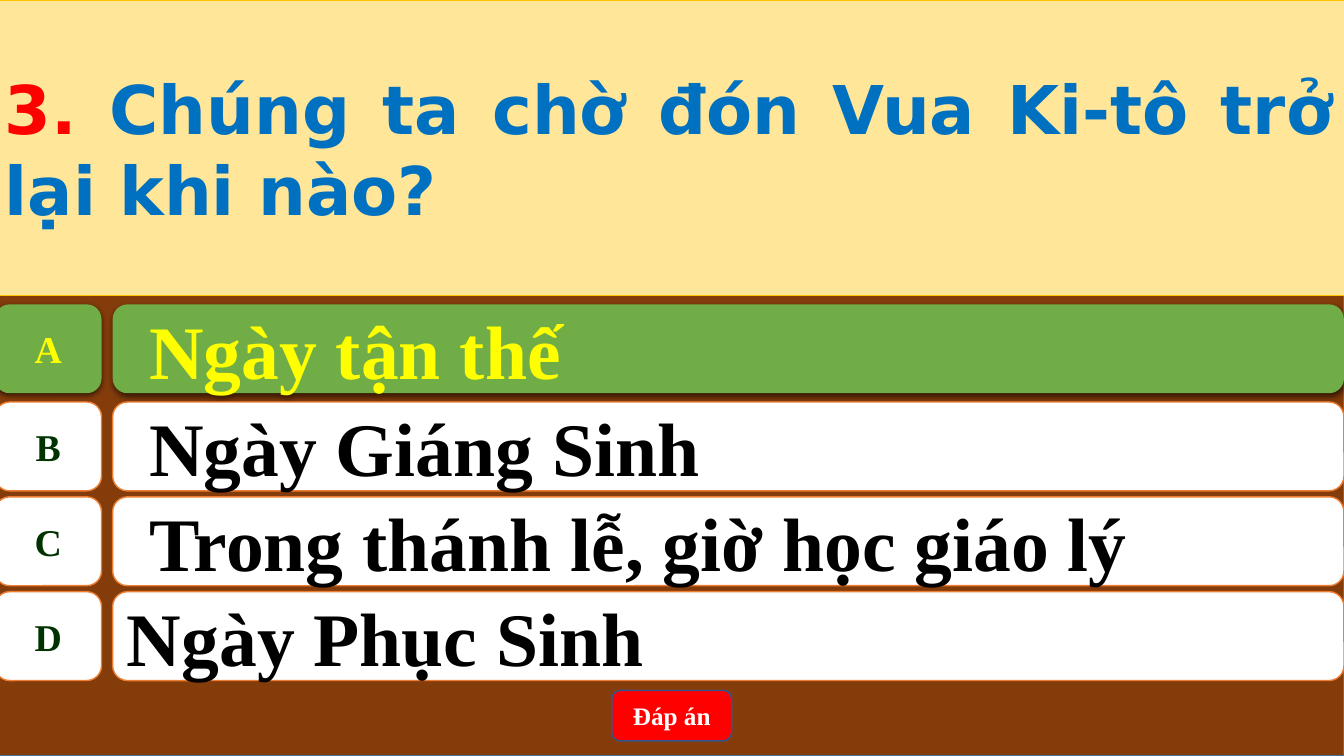
from dataclasses import dataclass

from lxml import etree
from pptx import Presentation
from pptx import util as u
from pptx.dml.color import RGBColor
from pptx.enum import shapes, text
from pptx.oxml import ns


@dataclass(frozen=True)
class Theme:
    brown: str = "843C0B"
    brown_line: str = "43739E"
    cream: str = "FFE699"
    gold: str = "FFC000"
    white: str = "FFFFFF"
    orange: str = "ED7D31"
    green: str = "70AD47"
    dark_green: str = "003300"
    yellow: str = "FFFF00"
    black: str = "000000"
    red: str = "FF0000"
    blue: str = "0070C0"
    button_line: str = "325491"
    question_font: str = "DejaVu Sans"
    answer_font: str = "Times New Roman"
    question_size: int = 48
    answer_size: int = 54
    letter_size: int = 27
    button_size: int = 18


THEME = Theme()
LEFT, WIDTH = -0.13, 34.0
ROW_HEIGHT = 2.24
# Letter, answer, top in cm, indented, correct
ANSWERS = [
    ("A", "Ngày tận thế", 7.67, True, True),
    ("B", "Ngày Giáng Sinh", 10.13, True, False),
    ("C", "Trong thánh lễ, giờ học giáo lý", 12.52, True, False),
    ("D", "Ngày Phục Sinh", 14.91, False, False),
]


def paint(shape, fill, line=None, line_width=1):
    shape.fill.solid()
    shape.fill.fore_color.rgb = RGBColor.from_string(fill)
    if line:
        shape.line.color.rgb = RGBColor.from_string(line)
        shape.line.width = u.Pt(line_width)
    else:
        shape.line.fill.background()


def style_font(font, name, size, color):
    font.name, font.size, font.bold = name, u.Pt(size), True
    font.color.rgb = RGBColor.from_string(color)


def add_box(slide, kind, box, fill, line=None):
    shape = slide.shapes.add_shape(kind, *(u.Cm(length) for length in box))
    shape.shadow.inherit = False
    paint(shape, fill, line)
    return shape


def write(shape, words, size, color, align, wrap=True):
    frame = shape.text_frame
    frame.word_wrap = wrap
    frame.vertical_anchor = text.MSO_ANCHOR.MIDDLE
    paragraph = frame.paragraphs[0]
    paragraph.text = words
    paragraph.alignment = align
    style_font(paragraph.font, THEME.answer_font, size, color)
    return paragraph


def drop_shadow(shape):
    effects = shape.element.spPr.find(ns.qn("a:effectLst"))
    shadow = etree.SubElement(
        effects, ns.qn("a:outerShdw"), blurRad=str(u.Pt(4.5)),
        dist=str(u.Pt(1.5)), dir="5400000", algn="ctr", rotWithShape="0")
    color = etree.SubElement(shadow, ns.qn("a:srgbClr"), val=THEME.black)
    etree.SubElement(color, ns.qn("a:alpha"), val="63000")


def add_question(slide, box, number, question):
    title = slide.shapes.title
    title.left, title.top, title.width, title.height = map(u.Cm, box)
    title.element.getparent().append(title.element)  # in front of the backdrop
    paint(title, THEME.cream, THEME.gold, 0.5)
    frame = title.text_frame
    frame.word_wrap = True
    frame.auto_size = text.MSO_AUTO_SIZE.NONE
    frame.vertical_anchor = text.MSO_ANCHOR.MIDDLE
    paragraph = frame.paragraphs[0]
    paragraph.alignment = text.PP_ALIGN.JUSTIFY
    paragraph.line_spacing = 1.0
    for words, color in ((number, THEME.red), (question, THEME.blue)):
        run = paragraph.add_run()
        run.text = words
        style_font(run.font, THEME.question_font, THEME.question_size, color)


def add_answer(slide, box, letter, answer, indented, correct):
    left, top, width, height = box
    letter_width, answer_offset = 2.69, 2.97
    fill = THEME.green if correct else THEME.white
    line = None if correct else THEME.orange

    bar = add_box(slide, shapes.MSO_SHAPE.ROUNDED_RECTANGLE,
                  (left + answer_offset, top, width - answer_offset, height),
                  fill, line)
    paragraph = write(bar, answer, THEME.answer_size,
                      THEME.yellow if correct else THEME.black,
                      text.PP_ALIGN.LEFT)
    if indented:
        properties = paragraph._p.get_or_add_pPr()
        properties.set("marL", str(u.Cm(1.27)))
        properties.set("indent", str(u.Cm(-0.71)))

    tile = add_box(slide, shapes.MSO_SHAPE.FLOWCHART_ALTERNATE_PROCESS,
                   (left, top, letter_width, height), fill, line)
    write(tile, letter, THEME.letter_size,
          THEME.yellow if correct else THEME.dark_green,
          text.PP_ALIGN.CENTER, wrap=False)
    if correct:
        drop_shadow(bar)
        drop_shadow(tile)


def add_button(slide, box, label):
    button = add_box(slide, shapes.MSO_SHAPE.ROUNDED_RECTANGLE, box,
                     THEME.red, THEME.button_line)
    write(button, label, THEME.button_size, THEME.white, text.PP_ALIGN.CENTER)


def add_quiz_slide(presentation):
    slide = presentation.slides.add_slide(presentation.slide_layouts[5])
    add_box(slide, shapes.MSO_SHAPE.RECTANGLE, (LEFT, 0, WIDTH, 19.05),
            THEME.brown, THEME.brown_line)
    add_question(slide, (LEFT, 0, WIDTH, 7.45), "3. ",
                 "Chúng ta chờ đón Vua Ki-tô trở lại khi nào?")
    for letter, answer, top, indented, correct in ANSWERS:
        add_answer(slide, (LEFT, top, WIDTH, ROW_HEIGHT),
                   letter, answer, indented, correct)
    add_button(slide, (15.42, 17.4, 3.02, 1.27), "Đáp án")


def main():
    presentation = Presentation()
    presentation.slide_width = u.Cm(33.87)
    presentation.slide_height = u.Cm(19.05)
    add_quiz_slide(presentation)
    presentation.save("out.pptx")


if __name__ == "__main__":
    main()
